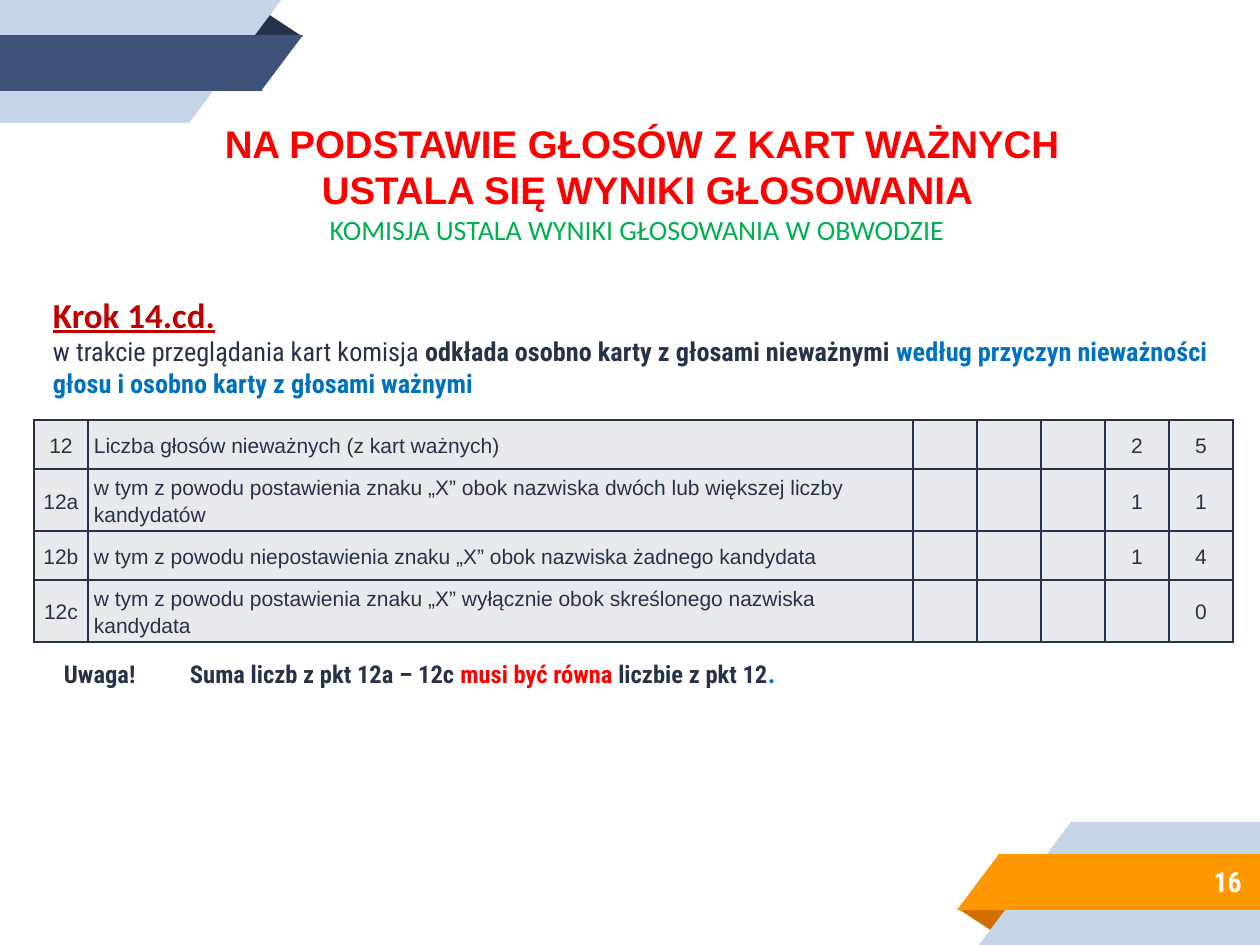
"""Build the slide on invalid votes with its tally table."""
from lxml import etree
from pptx import Presentation, util as u
from pptx.dml.color import RGBColor
from pptx.enum import shapes, text
from pptx.oxml import ns

PX = 914400 / 126
W, H = 1260, 945
INK, RED, BLUE, PALE = "263248", "FF0000", "0070C0", "C7D3E6"
ROBOTO = "Roboto Condensed"
MID = text.PP_ALIGN.CENTER


def px(*values):
    return [u.Emu(round(v * PX)) for v in values]


def add_text(p, content, size=12, color=INK, font="Arial", bold=False, underline=False,
             align=None, spacing=None):
    r = p.add_run()
    r.text = content
    r.font.size, r.font.name = u.Pt(size), font
    r.font.bold, r.font.underline = bold, underline
    r.font.color.rgb = RGBColor.from_string(color)
    if align is not None:
        p.alignment = align
    if spacing is not None:
        p.line_spacing = spacing


prs = Presentation()
prs.slide_width, prs.slide_height = px(W, H)
s = prs.slides.add_slide(prs.slide_layouts[5])

kinds = shapes.MSO_SHAPE
ribbons = [
    (kinds.ISOSCELES_TRIANGLE, 249, 13, 54, 24, (INK, "D26F00")),
    (kinds.RECTANGLE, 0, 0, 189, 123, (PALE, PALE)),
    (kinds.RIGHT_TRIANGLE, 189, 0, 92, 123, (PALE, PALE)),
    (kinds.RECTANGLE, 0, 35, 262, 56, ("3F5378", "FF9800")),
    (kinds.RIGHT_TRIANGLE, 261, 35, 42, 56, ("3F5378", "FF9800")),
]
for corner in (0, 1):
    for kind, x, y, w, h, colors in ribbons:
        if corner:
            x, y = W - x - w, H - y - h
        sp = s.shapes.add_shape(kind, *px(x, y, w, h))
        sp.shadow.inherit = False
        sp.fill.solid()
        sp.fill.fore_color.rgb = RGBColor.from_string(colors[corner])
        sp.line.fill.background()
        if kind == kinds.ISOSCELES_TRIANGLE:
            sp.adjustments[0] = 0.324
            sp.rotation = 180 * corner
        elif kind == kinds.RIGHT_TRIANGLE:
            sp._element.spPr.xfrm.set("flipH", "1")
            sp.rotation = 180 * (1 - corner)

title = s.shapes.title
title.left, title.top, title.width, title.height = px(40, 120, 1215, 92)
subtitle, body, note, number = [
    s.shapes.add_textbox(*px(*box))
    for box in ((230, 213, 814, 36), (53, 293, 1189, 108), (64, 657, 1178, 34), (1050, 852, 192, 58))
]
for sp in (title, subtitle, body, note, number):
    tf = sp.text_frame
    tf.word_wrap, tf.auto_size = True, text.MSO_AUTO_SIZE.NONE
    tf.margin_left = tf.margin_right = tf.margin_top = tf.margin_bottom = 0
    tf.vertical_anchor = text.MSO_ANCHOR.TOP
number.text_frame.vertical_anchor = text.MSO_ANCHOR.MIDDLE

tf = title.text_frame
heading = dict(size=22, color=RED, bold=True, align=MID, spacing=u.Pt(26.3))
add_text(tf.paragraphs[0], "NA PODSTAWIE GŁOSÓW Z KART WAŻNYCH ", **heading)
add_text(tf.add_paragraph(), "USTALA SIĘ WYNIKI GŁOSOWANIA", **heading)
add_text(subtitle.text_frame.paragraphs[0], "KOMISJA USTALA WYNIKI GŁOSOWANIA W OBWODZIE",
         size=16, color="00B050", font="Calibri", align=MID)

tf = body.text_frame
add_text(tf.paragraphs[0], "Krok 14.cd.", size=20, color="C00000", font="Calibri",
         bold=True, underline=True)
p = tf.add_paragraph()
p.line_spacing = u.Pt(18.3)
for content, color, bold in (
    ("w trakcie przeglądania kart komisja ", INK, False),
    ("odkłada osobno karty z głosami nieważnymi ", INK, True),
    ("według przyczyn nieważności głosu i osobno karty z głosami ważnymi", BLUE, True),
):
    add_text(p, content, size=15, color=color, font=ROBOTO, bold=bold)

p = note.text_frame.paragraphs[0]
for content, color, size in (
    ("Uwaga!\tSuma liczb z pkt 12a – 12c ", INK, 14),
    ("musi być równa", RED, 14),
    (" liczbie z pkt 12", INK, 14),
    (".", BLUE, 15),
):
    add_text(p, content, size=size, color=color, font=ROBOTO, bold=True)
add_text(number.text_frame.paragraphs[0], "16", size=16, color="FFFFFF", font=ROBOTO,
         bold=True, align=text.PP_ALIGN.RIGHT)

rows = [
    ("12", "Liczba głosów nieważnych (z kart ważnych)", "25"),
    ("12a", "w tym z powodu postawienia znaku „X” obok nazwiska dwóch lub większej liczby kandydatów", "11"),
    ("12b", "w tym z powodu niepostawienia znaku „X” obok nazwiska żadnego kandydata", "14"),
    ("12c", "w tym z powodu postawienia znaku „X” wyłącznie obok skreślonego nazwiska kandydata", "0"),
]
widths = [54, 825] + [64] * 5
heights = [49, 62] * 2
table = s.shapes.add_table(len(rows), len(widths), *px(34, 420, sum(widths), sum(heights))).table
table.first_row = table.horz_banding = False
for column, width in zip(table.columns, px(*widths)):
    column.width = width
for row, height, (point, label, votes) in zip(table.rows, px(*heights), rows):
    row.height = height
    for i, (cell, content) in enumerate(zip(row.cells, [point, label, *votes.rjust(5)])):
        cell.fill.solid()
        cell.fill.fore_color.rgb = RGBColor.from_string("E8E9EC")
        cell.margin_left, cell.margin_right = px(6, 6)
        cell.margin_top = cell.margin_bottom = 0
        cell.vertical_anchor = text.MSO_ANCHOR.MIDDLE
        if content.strip():
            add_text(cell.text_frame.paragraphs[0], content, spacing=1.15,
                     align=text.PP_ALIGN.LEFT if i == 1 else MID)
        tcPr = cell._tc.get_or_add_tcPr()
        for k, side in enumerate(("a:lnL", "a:lnR", "a:lnT", "a:lnB")):
            ln = etree.Element(ns.qn(side), w=str(u.Pt(1)))
            fill = etree.SubElement(ln, ns.qn("a:solidFill"))
            etree.SubElement(fill, ns.qn("a:srgbClr"), val=INK)
            tcPr.insert(k, ln)

prs.save("out.pptx")
